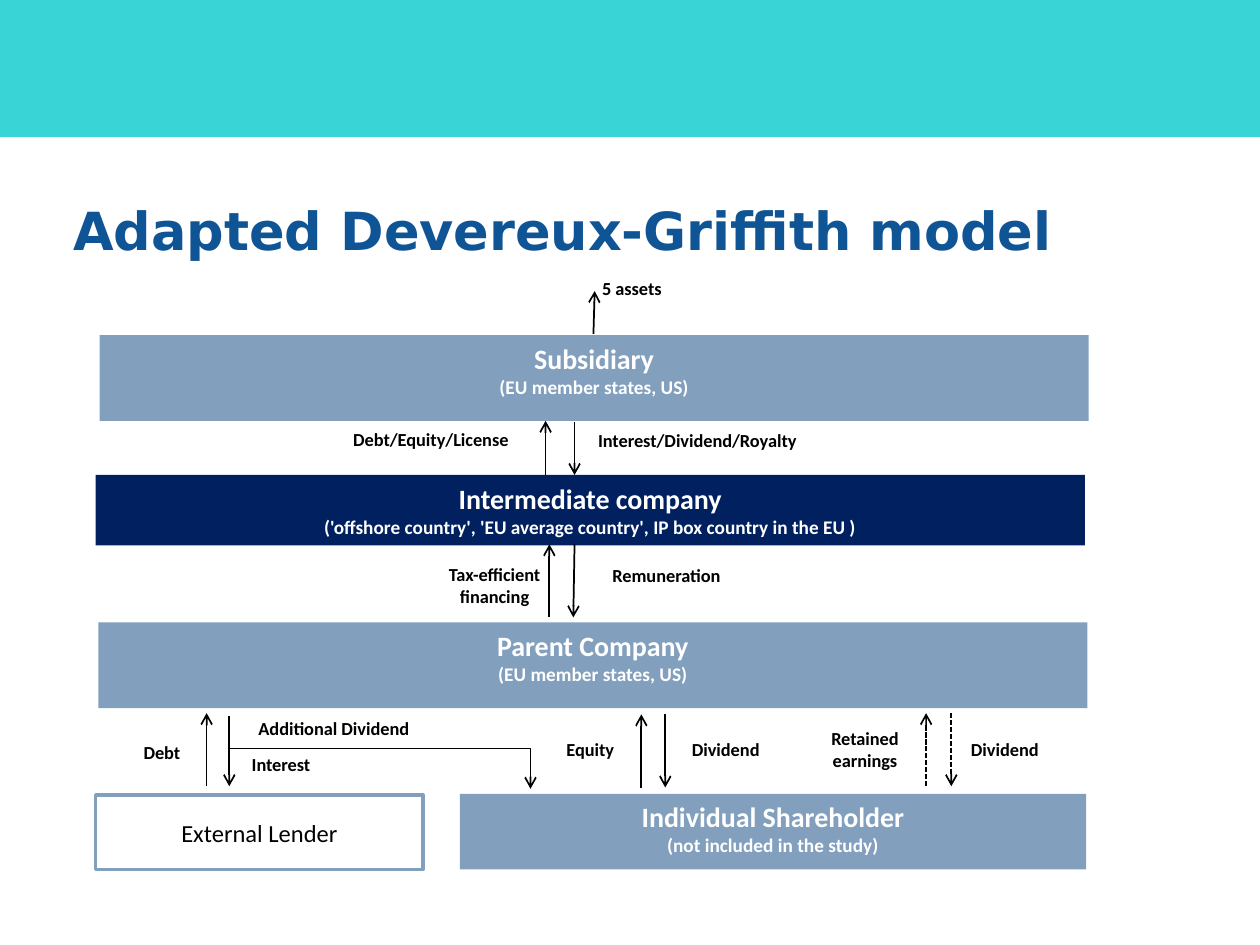
from lxml.etree import SubElement
from pptx import Presentation
from pptx.dml.color import RGBColor
from pptx.enum.dml import MSO_LINE
from pptx.enum.shapes import MSO_CONNECTOR, MSO_SHAPE
from pptx.enum.text import MSO_ANCHOR, MSO_AUTO_SIZE, PP_ALIGN
from pptx.oxml.ns import qn
from pptx.util import Pt

PX = 9144  # 100 px to the inch
TEAL = RGBColor(0x38, 0xD4, 0xD6)
TITLE_BLUE = RGBColor(0x0F, 0x54, 0x94)
STEEL = RGBColor(0x82, 0xA0, 0xBE)
NAVY = RGBColor(0x00, 0x20, 0x60)
WHITE = RGBColor(0xFF, 0xFF, 0xFF)
BLACK = RGBColor(0x00, 0x00, 0x00)


def write_lines(shape, lines, color, anchor=MSO_ANCHOR.TOP):
    """Fill a shape with centred lines of (text, size, bold)."""
    frame = shape.text_frame
    frame.word_wrap = True
    frame.vertical_anchor = anchor
    frame.text = "\n".join(text for text, size, bold in lines)
    for para, (text, size, bold) in zip(frame.paragraphs, lines):
        para.alignment = PP_ALIGN.CENTER
        for span in para.runs:
            span.font.name = "Calibri"
            span.font.size = Pt(size)
            span.font.bold = bold
            span.font.color.rgb = color


def add_rectangle(left, top, width, height, fill, line=None, line_width=1):
    box = page.shapes.add_shape(
        MSO_SHAPE.RECTANGLE, left * PX, top * PX, width * PX, height * PX)
    box.shadow.inherit = False
    box.fill.solid()
    box.fill.fore_color.rgb = fill
    if line is None:
        box.line.fill.background()
    else:
        box.line.color.rgb = line
        box.line.width = Pt(line_width)
    return box


deck = Presentation()
deck.slide_width, deck.slide_height = 1000 * PX, 750 * PX
page = deck.slides.add_slide(deck.slide_layouts[5])

# Banner and title
banner = add_rectangle(0, 0, 1000, 108, TEAL, TEAL, 0.75)
title = page.shapes.title
title.left, title.top, title.width, title.height = 48 * PX, 147 * PX, 900 * PX, 71 * PX
title.text_frame.text = "Adapted Devereux-Griffith model"
title.text_frame.auto_size = MSO_AUTO_SIZE.NONE
title.text_frame.vertical_anchor = MSO_ANCHOR.MIDDLE
title_para = title.text_frame.paragraphs[0]
title_para.alignment = PP_ALIGN.LEFT
title_font = title_para.runs[0].font
title_font.name = "DejaVu Sans"
title_font.size = Pt(30)
title_font.bold = True
title_font.color.rgb = TITLE_BLUE

# Companies: left, top, width, height, fill, name, detail
companies = [
    (79, 266, 785, 68, STEEL, "Subsidiary", "(EU member states, US)"),
    (76, 377, 785, 56, NAVY, "Intermediate company",
     "('offshore country', 'EU average country', IP box country in the EU )"),
    (78, 494, 785, 68, STEEL, "Parent Company", "(EU member states, US)"),
    (365, 630, 497, 60, STEEL, "Individual Shareholder", "(not included in the study)"),
]
for left, top, width, height, fill, name, detail in companies:
    company = add_rectangle(left, top, width, height, fill)
    write_lines(company, [(name, 16, True), (detail, 11, True)], WHITE)

lender = add_rectangle(76, 631, 260, 59, WHITE, STEEL, 2)
write_lines(lender, [("External Lender", 14, False)], BLACK, MSO_ANCHOR.MIDDLE)

# Flow labels: left, top, width, height, text
labels = [
    (452, 215, 99, 28, "5 assets"),
    (248, 335, 188, 28, "Debt/Equity/License"),
    (460, 336, 187, 28, "Interest/Dividend/Royalty"),
    (343, 442, 99, 45, "Tax-efficient financing"),
    (458, 443, 142, 28, "Remuneration"),
    (98, 583, 61, 30, "Debt"),
    (161, 564, 208, 30, "Additional Dividend"),
    (182, 593, 82, 30, "Interest"),
    (433, 581, 71, 30, "Equity"),
    (505, 581, 142, 30, "Dividend"),
    (639, 572, 95, 49, "Retained earnings"),
    (720, 581, 155, 30, "Dividend"),
]
for left, top, width, height, text in labels:
    label = page.shapes.add_textbox(left * PX, top * PX, width * PX, height * PX)
    write_lines(label, [(text, 10.5, True)], BLACK)

# Flow arrows: start x, start y, end x, end y, kind
STRAIGHT, DASHED, BENT = "straight", "dashed", "bent"
arrows = [
    (471, 265, 472, 231, STRAIGHT),
    (433, 377, 433, 334, STRAIGHT),
    (456, 335, 456, 377, STRAIGHT),
    (436, 490, 436, 432, STRAIGHT),
    (456, 432, 455, 490, STRAIGHT),
    (164, 624, 164, 566, STRAIGHT),
    (182, 568, 182, 624, STRAIGHT),
    (182, 594, 421, 626, BENT),
    (509, 625, 509, 567, STRAIGHT),
    (528, 567, 528, 625, STRAIGHT),
    (735, 624, 735, 566, DASHED),
    (755, 566, 755, 624, DASHED),
]
for x1, y1, x2, y2, kind in arrows:
    route = MSO_CONNECTOR.ELBOW if kind == BENT else MSO_CONNECTOR.STRAIGHT
    arrow = page.shapes.add_connector(route, x1 * PX, y1 * PX, x2 * PX, y2 * PX)
    arrow.line.color.rgb = BLACK
    arrow.line.width = Pt(1)
    if kind == DASHED:
        arrow.line.dash_style = MSO_LINE.SQUARE_DOT
    properties = arrow._element.spPr
    SubElement(properties.find(qn("a:ln")), qn("a:tailEnd"), type="arrow")
    SubElement(properties, qn("a:effectLst"))
    if kind == BENT:  # turn down only at the far end
        guides = properties.find(qn("a:prstGeom")).get_or_add_avLst()
        SubElement(guides, qn("a:gd"), name="adj1", fmla="val 100000")

deck.save("out.pptx")
